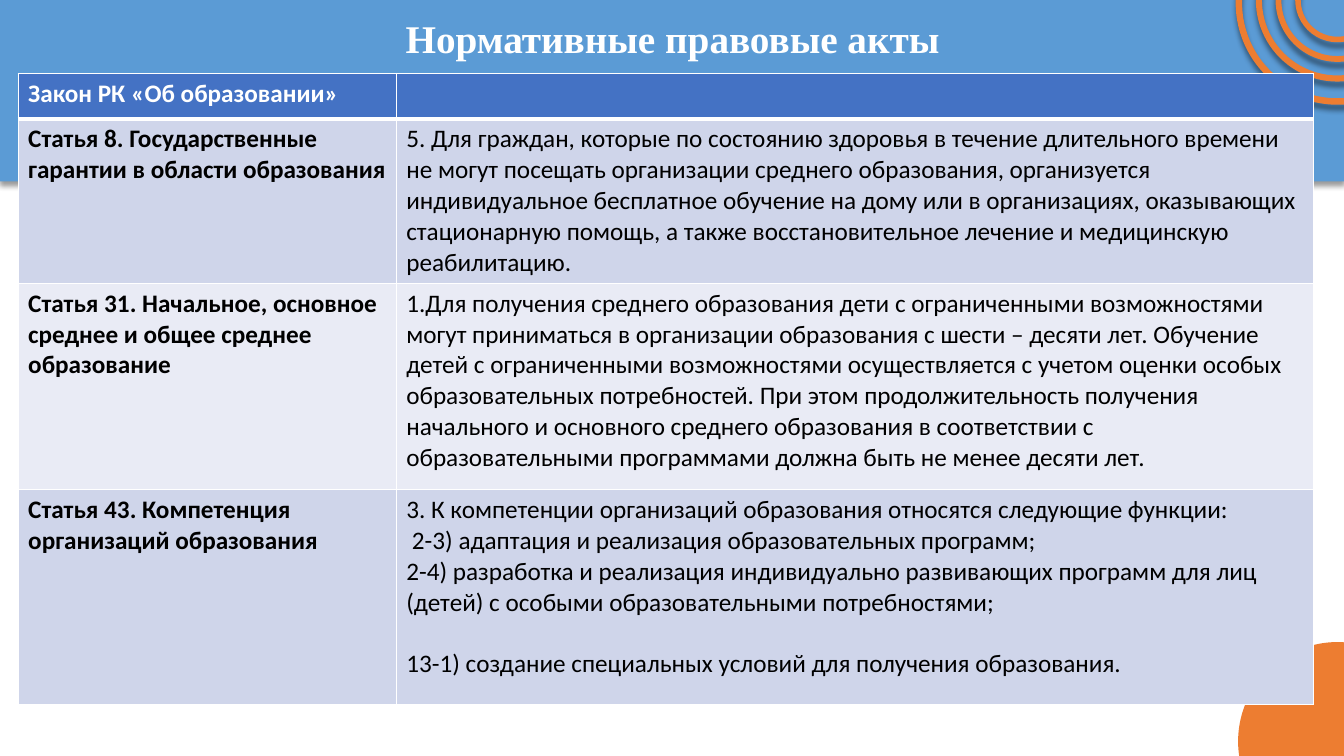
from dataclasses import dataclass

from lxml import etree
from pptx import Presentation
from pptx.dml.color import RGBColor
from pptx.enum.shapes import MSO_SHAPE
from pptx.enum.text import MSO_ANCHOR, MSO_AUTO_SIZE, PP_ALIGN
from pptx.oxml.ns import qn
from pptx.util import Inches, Pt

RECT, OVAL, RING = MSO_SHAPE.RECTANGLE, MSO_SHAPE.OVAL, MSO_SHAPE.DONUT
CENTER, MIDDLE, NO_FIT = PP_ALIGN.CENTER, MSO_ANCHOR.MIDDLE, MSO_AUTO_SIZE.NONE

WHITE, BLACK = "FFFFFF", "000000"
SKY, ORANGE, NAVY = "5B9BD5", "ED7D31", "4472C4"
DARK, PALE = "CFD5EA", "E9EBF5"
WIDE, HIGH = 13.33, 7.5
MID_X = 13.265


@dataclass
class Disc:
    size: float
    mid_y: float


@dataclass
class Row:
    height: float
    fill: str
    head: str
    body: list[str]
    color: str = BLACK
    base: float = 1
    gap: float = 0


RINGS = [Disc(1.97, 0.03), Disc(1.57, 0), Disc(1.18, 0), Disc(0.79, 0)]
COLS = [3.75, 9.1]
ROWS = [
    Row(0.45, NAVY, "Закон РК «Об образовании»", [], WHITE, 3),
    Row(1.63, DARK, "Статья 8. Государственные гарантии в области образования", [
        "5. Для граждан, которые по состоянию здоровья в течение длительного времени "
        "не могут посещать организации среднего образования, организуется "
        "индивидуальное бесплатное обучение на дому или в организациях, оказывающих "
        "стационарную помощь, а также восстановительное лечение и медицинскую "
        "реабилитацию."]),
    Row(2.05, PALE, "Статья 31. Начальное, основное среднее и общее среднее образование", [
        "1.Для получения среднего образования дети с ограниченными возможностями "
        "могут приниматься в организации образования с шести – десяти лет. Обучение "
        "детей с ограниченными возможностями осуществляется с учетом оценки особых "
        "образовательных потребностей. При этом продолжительность получения "
        "начального и основного среднего образования в соответствии с "
        "образовательными программами должна быть не менее десяти лет."]),
    Row(2.13, DARK, "Статья 43. Компетенция организаций образования", [
        "3. К компетенции организаций образования относятся следующие функции:",
        " 2-3) адаптация и реализация образовательных программ;",
        "2-4) разработка и реализация индивидуально развивающих программ для лиц "
        "(детей) с особыми образовательными потребностями;",
        "13-1) создание специальных условий для получения образования."], gap=22),
]


def paint(target, color: str) -> None:
    target.solid()
    target.fore_color.rgb = RGBColor.from_string(color)


def shade(shape, alpha: int, blur: float, dist: float) -> None:
    """Give the shape a black shadow that falls straight down."""
    shape.shadow.inherit = False
    effects = shape._element.spPr.find(qn("a:effectLst"))
    outer = etree.SubElement(effects, qn("a:outerShdw"), blurRad=str(Pt(blur)),
                             dist=str(Pt(dist)), dir="5400000", rotWithShape="0")
    tint = etree.SubElement(outer, qn("a:srgbClr"), val=BLACK)
    etree.SubElement(tint, qn("a:alpha"), val=str(alpha * 1000))


def draw(shapes, kind, x: float, y: float, w: float, h: float, color: str):
    shape = shapes.add_shape(kind, Inches(x), Inches(y), Inches(w), Inches(h))
    shape.shadow.inherit = False
    paint(shape.fill, color)
    shape.line.fill.background()
    return shape


def disc(shapes, kind, item: Disc):
    half = item.size / 2
    return draw(shapes, kind, MID_X - half, item.mid_y - half,
                item.size, item.size, ORANGE)


def write(frame, lines: list[str], *, size: float = 18, font: str = "Calibri",
          color: str = BLACK, bold: bool = False, align=None,
          spacing: float = 1, gap: float = 0) -> None:
    """Fill the frame; gap is the space in points before its last paragraph."""
    for i, line in enumerate(lines):
        para = frame.paragraphs[0] if i == 0 else frame.add_paragraph()
        para.alignment, para.line_spacing = align, spacing
        if gap and i == len(lines) - 1:
            para.space_before = Pt(gap)
        run = para.add_run()
        run.text = line
        run.font.size, run.font.name, run.font.bold = Pt(size), font, bold
        run.font.color.rgb = RGBColor.from_string(color)


def edge(cell, base: float) -> None:
    """Draw white borders, the bottom one base points wide."""
    props = cell._tc.get_or_add_tcPr()
    for side, width in zip("LRTB", (1, 1, 1, base)):
        line = etree.SubElement(props, qn(f"a:ln{side}"), w=str(Pt(width)))
        fill = etree.SubElement(line, qn("a:solidFill"))
        etree.SubElement(fill, qn("a:srgbClr"), val=WHITE)


def scene(shapes) -> None:
    band = draw(shapes, RECT, 0, 0, WIDE, 1.8, SKY)
    shade(band, 40, 4, 3)
    disc(shapes, OVAL, Disc(1.97, 7.355))
    for item in RINGS:
        ring = disc(shapes, RING, item)
        ring.adjustments[0] = 0.008
        paint(ring.line.fill, ORANGE)
        ring.line.width = Pt(3.5)
        shade(ring, 43, 4, 4)


def head(shapes) -> None:
    title = shapes.title
    title.left, title.top = Inches(0.92), Inches(0.08)
    title.width, title.height = Inches(11.5), Inches(0.65)
    frame = title.text_frame
    frame.word_wrap, frame.auto_size, frame.vertical_anchor = True, NO_FIT, MIDDLE
    write(frame, ["Нормативные правовые акты"], size=28, font="Times New Roman",
          color=WHITE, bold=True, align=CENTER, spacing=0.9)
    shapes._spTree.append(title._element)  # bring in front of the blue band


def acts(shapes) -> None:
    table = shapes.add_table(len(ROWS), len(COLS), Inches(0.18), Inches(0.73),
                             Inches(sum(COLS)),
                             Inches(sum(r.height for r in ROWS))).table
    for col, width in zip(table.columns, COLS):
        col.width = Inches(width)
    for i, row in enumerate(ROWS):
        table.rows[i].height = Inches(row.height)
        for j, lines in enumerate(([row.head], row.body)):
            cell = table.cell(i, j)
            edge(cell, row.base)
            paint(cell.fill, row.fill)
            write(cell.text_frame, lines, color=row.color, bold=j == 0,
                  gap=row.gap if j else 0)


def main() -> None:
    deck = Presentation()
    deck.slide_width, deck.slide_height = Inches(WIDE), Inches(HIGH)
    shapes = deck.slides.add_slide(deck.slide_layouts[5]).shapes
    scene(shapes)
    head(shapes)
    acts(shapes)
    deck.save("out.pptx")


if __name__ == "__main__":
    main()
